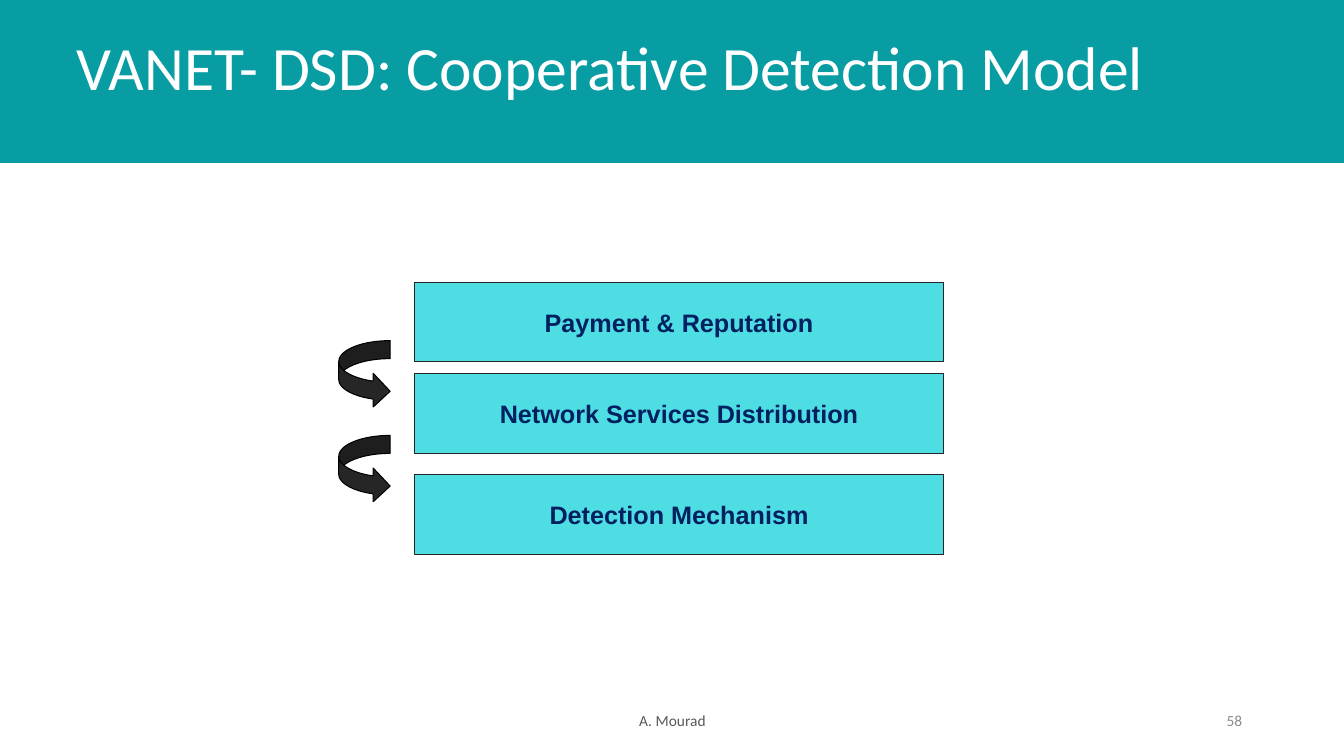
"""Build the cooperative detection model slide."""
from dataclasses import dataclass

from lxml import etree
from pptx import Presentation
from pptx.dml.color import RGBColor
from pptx.enum.shapes import MSO_SHAPE
from pptx.enum.text import MSO_ANCHOR, MSO_AUTO_SIZE, PP_ALIGN
from pptx.oxml.ns import qn
from pptx.util import Pt

PX = 9144
RECT = MSO_SHAPE.RECTANGLE
CURVED_ARROW = MSO_SHAPE.CURVED_RIGHT_ARROW
TOP, MIDDLE = MSO_ANCHOR.TOP, MSO_ANCHOR.MIDDLE
LEFT, CENTER, RIGHT = PP_ALIGN.LEFT, PP_ALIGN.CENTER, PP_ALIGN.RIGHT
NO_AUTOFIT = MSO_AUTO_SIZE.NONE
TITLE_ONLY = 5


@dataclass(frozen=True)
class Theme:
    band: str = "089CA3"
    layer: str = "0BD0D9"
    layer_alpha: int = 72
    dark: str = "262626"
    black: str = "000000"
    title: str = "FFFFFF"
    label: str = "002060"
    footer: str = "595959"
    number: str = "8C8C8C"
    title_font: str = "Calibri"
    label_font: str = "Arial"
    title_size: int = 44
    label_size: int = 18
    footer_size: int = 11


@dataclass(frozen=True)
class Box:
    x: int
    y: int
    w: int
    h: int

    def emu(self) -> tuple[int, ...]:
        return tuple(v * PX for v in (self.x, self.y, self.w, self.h))


@dataclass(frozen=True)
class Layer:
    text: str
    y: int


@dataclass(frozen=True)
class Footer:
    text: str
    box: Box
    align: PP_ALIGN
    color: str


THEME = Theme()
LAYERS = (
    Layer("Payment & Reputation", 280),
    Layer("Network Services Distribution", 371),
    Layer("Detection Mechanism", 471),
)
ARROW_TOPS = (338, 432)
ARROW_ADJUSTMENTS = (0.35, 0.69, 0.33)
FOOTERS = (
    Footer("A. Mourad", Box(442, 695, 450, 40), CENTER, THEME.footer),
    Footer("58", Box(942, 695, 300, 40), RIGHT, THEME.number),
)


def add_shape(slide, kind: MSO_SHAPE, box: Box, fill: str, line: str, width: float = 0.75):
    sp = slide.shapes.add_shape(kind, *box.emu())
    sp.shadow.inherit = False
    sp.fill.solid()
    sp.fill.fore_color.rgb = RGBColor.from_string(fill)
    sp.line.color.rgb = RGBColor.from_string(line)
    sp.line.width = Pt(width)
    return sp


def set_text(sp, text: str, font: str, size: int, color: str, align: PP_ALIGN,
             anchor: MSO_ANCHOR = MIDDLE, bold: bool = False) -> None:
    tf = sp.text_frame
    tf.text = text
    tf.word_wrap = True
    tf.auto_size = NO_AUTOFIT
    tf.vertical_anchor = anchor
    p = tf.paragraphs[0]
    p.alignment = align
    r = p.runs[0]
    r.font.name = font
    r.font.size = Pt(size)
    r.font.bold = bold
    r.font.color.rgb = RGBColor.from_string(color)


def add_layer(slide, layer: Layer) -> None:
    sp = add_shape(slide, RECT, Box(411, layer.y, 525, 79), THEME.layer, THEME.dark)
    color = sp.fill._xPr.find(qn("a:solidFill"))[0]
    etree.SubElement(color, qn("a:alpha")).set("val", str(THEME.layer_alpha * 1000))
    set_text(sp, layer.text, THEME.label_font, THEME.label_size, THEME.label, CENTER, bold=True)
    tf = sp.text_frame
    tf.word_wrap = False
    tf.margin_left = tf.margin_right = tf.margin_top = tf.margin_bottom = 0


def add_arrow(slide, y: int) -> None:
    sp = add_shape(slide, CURVED_ARROW, Box(336, y, 51, 67), THEME.dark, THEME.black)
    for i, value in enumerate(ARROW_ADJUSTMENTS):
        sp.adjustments[i] = value


def add_title(slide, text: str) -> None:
    add_shape(slide, RECT, Box(0, 0, 1333, 161), THEME.band, THEME.band, 1.5)
    sp = slide.shapes.title
    slide.shapes._spTree.append(sp._element)
    sp.left, sp.top, sp.width, sp.height = Box(66, 32, 1176, 132).emu()
    set_text(sp, text, THEME.title_font, THEME.title_size, THEME.title, LEFT, TOP)
    sp.text_frame.paragraphs[0].line_spacing = 0.9


def add_footer(slide, footer: Footer) -> None:
    sp = slide.shapes.add_textbox(*footer.box.emu())
    set_text(sp, footer.text, THEME.title_font, THEME.footer_size, footer.color, footer.align)


def main() -> None:
    prs = Presentation()
    prs.slide_width, prs.slide_height = 1333 * PX, 750 * PX
    slide = prs.slides.add_slide(prs.slide_layouts[TITLE_ONLY])
    for layer in LAYERS:
        add_layer(slide, layer)
    for y in ARROW_TOPS:
        add_arrow(slide, y)
    add_title(slide, "VANET- DSD: Cooperative Detection Model")
    for footer in FOOTERS:
        add_footer(slide, footer)
    prs.save("out.pptx")


if __name__ == "__main__":
    main()
